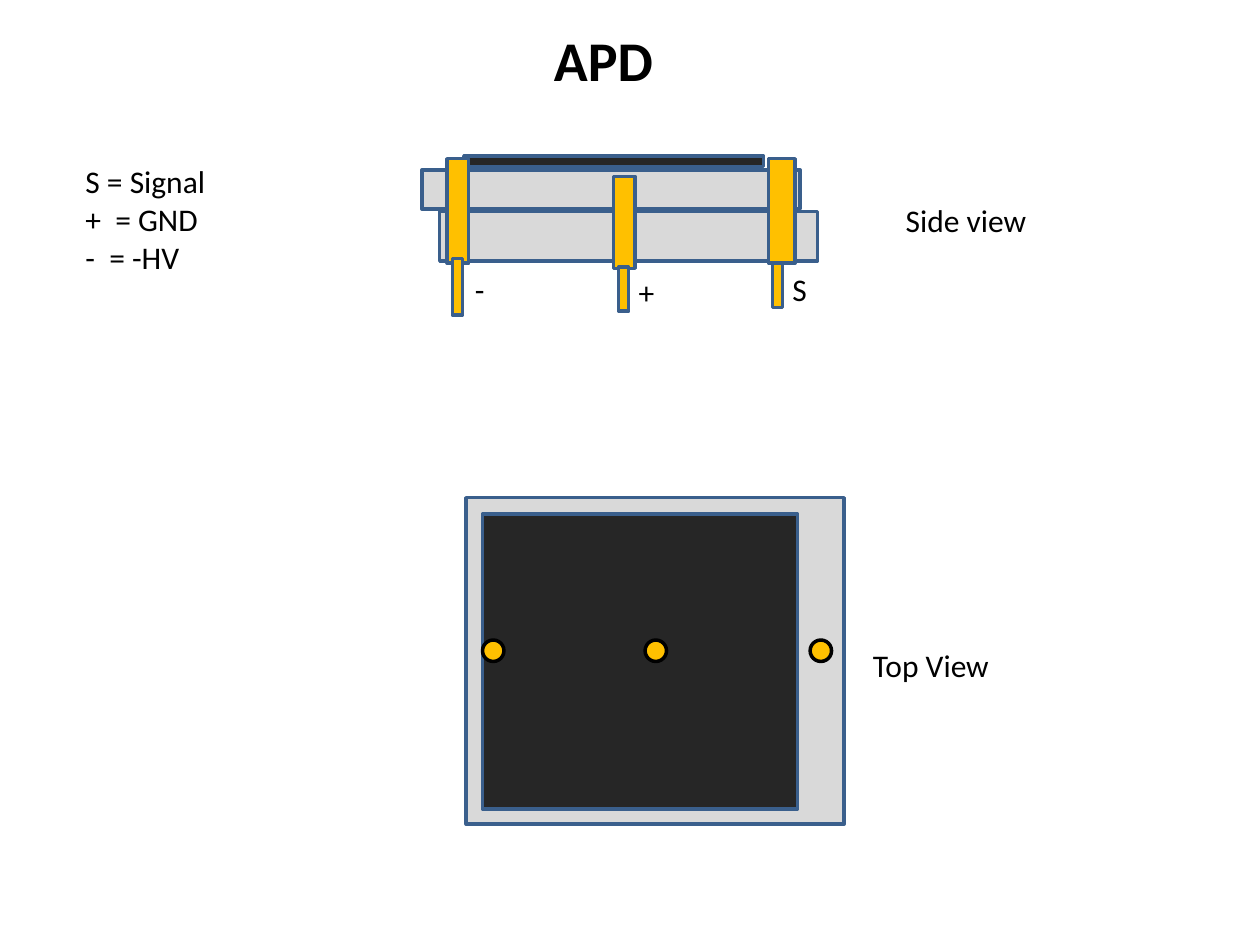
from typing import NamedTuple

from pptx import Presentation
from pptx import util as u
from pptx.dml.color import RGBColor
from pptx.enum import shapes, text

PX = 9144
GREY = RGBColor(0xD9, 0xD9, 0xD9)
DARK = RGBColor(0x26, 0x26, 0x26)
GOLD = RGBColor(0xFF, 0xC0, 0x00)
BLUE = RGBColor(0x3A, 0x5F, 0x8C)
BLACK = RGBColor(0, 0, 0)
RECT = shapes.MSO_SHAPE.RECTANGLE
OVAL = shapes.MSO_SHAPE.OVAL


class Part(NamedTuple):
    left: int
    top: int
    width: int
    height: int
    fill: RGBColor
    kind: int = RECT
    edge: RGBColor = BLUE


class Label(NamedTuple):
    left: int
    top: int
    width: int
    height: int
    words: str


TOP = [
    Part(370, 395, 300, 259, GREY),
    Part(383, 408, 250, 234, DARK),
    *(Part(left, 508, 17, 17, GOLD, OVAL, BLACK) for left in (383, 512, 643)),
]
SIDE = [
    Part(349, 168, 300, 39, GREY),
    Part(335, 135, 300, 31, GREY),
    Part(368, 124, 238, 8, DARK),
    Part(355, 126, 17, 83, GOLD),
    Part(359, 205, 8, 45, GOLD),
    Part(610, 126, 21, 83, GOLD),
    Part(613, 209, 8, 35, GOLD),
    Part(487, 140, 17, 73, GOLD),
    Part(491, 212, 8, 35, GOLD),
]
PINS = [
    Label(367, 209, 28, 40, "-"),
    Label(497, 212, 33, 40, "+"),
    Label(619, 209, 33, 40, "S"),
]
NOTES = [
    Label(709, 155, 117, 40, "Side view"),
    Label(683, 508, 113, 40, "Top View"),
    Label(58, 124, 116, 101, "S = Signal\n+  = GND\n-  = -HV"),
]
TITLE = Label(300, 17, 358, 59, "APD")


def draw(tree, part: Part) -> None:
    box = tree.add_shape(part.kind, *(n * PX for n in part[:4]))
    box.shadow.inherit = False
    box.fill.solid()
    box.fill.fore_color.rgb = part.fill
    box.line.color.rgb = part.edge
    box.line.width = u.Pt(2)


def write(tree, label: Label, size: int = 18, bold: bool = False):
    box = tree.add_textbox(*(n * PX for n in label[:4]))
    frame = box.text_frame
    frame.text = label.words
    frame.word_wrap = False
    frame.auto_size = text.MSO_AUTO_SIZE.SHAPE_TO_FIT_TEXT
    for para in frame.paragraphs:
        for run in para.runs:
            run.font.name = "Calibri"
            run.font.size = u.Pt(size)
            run.font.bold = bold
            run.font.color.rgb = BLACK
    return frame


def main() -> None:
    deck = Presentation()
    deck.slide_width = 1000 * PX
    deck.slide_height = 750 * PX
    tree = deck.slides.add_slide(deck.slide_layouts[6]).shapes

    head = write(tree, TITLE, 32, True)
    head.word_wrap = True
    head.auto_size = text.MSO_AUTO_SIZE.NONE
    head.vertical_anchor = text.MSO_ANCHOR.MIDDLE
    head.paragraphs[0].alignment = text.PP_ALIGN.CENTER

    for part in TOP:
        draw(tree, part)
    side = tree.add_group_shape().shapes
    for part in SIDE:
        draw(side, part)
    for pin in PINS:
        write(side, pin)
    for note in NOTES:
        write(tree, note)
    deck.save("out.pptx")


if __name__ == "__main__":
    main()
